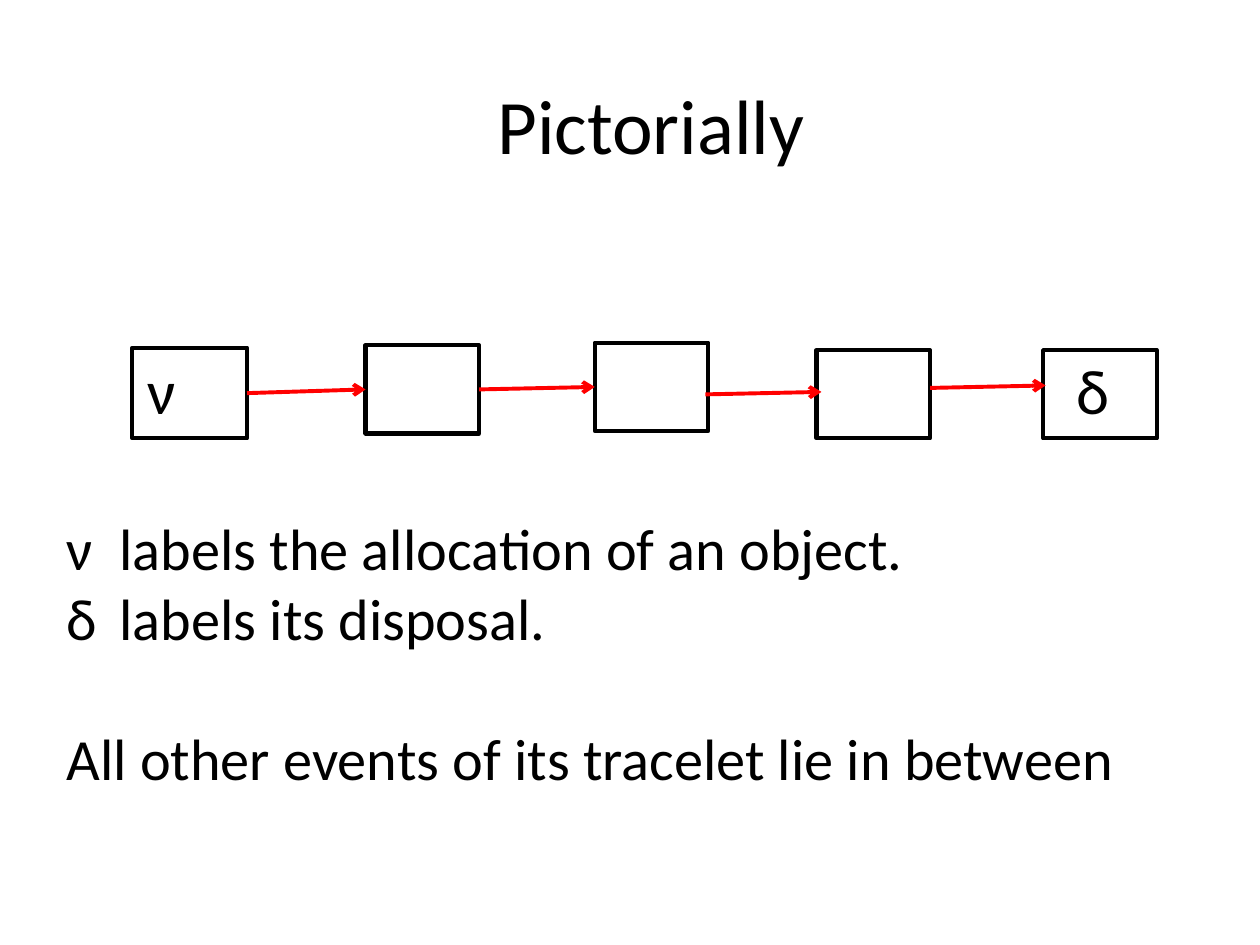
from pptx import Presentation
from pptx.dml.color import RGBColor
from pptx.enum.shapes import MSO_CONNECTOR, MSO_SHAPE
from pptx.enum.text import MSO_ANCHOR, PP_ALIGN
from pptx.oxml.ns import qn
from pptx.util import Cm, Pt
from lxml import etree

BLACK = RGBColor(0, 0, 0)
RED = RGBColor(255, 0, 0)
RECTANGLE = MSO_SHAPE.RECTANGLE
STRAIGHT = MSO_CONNECTOR.STRAIGHT
LEFT = PP_ALIGN.LEFT
CENTER = PP_ALIGN.CENTER
TOP = MSO_ANCHOR.TOP
MIDDLE = MSO_ANCHOR.MIDDLE
LEFT_SIDE, RIGHT_SIDE = 1, 3


class SlideBuilder:
    font = "Calibri"
    box_line = Pt(2.36)
    arrow_line = Pt(2.25)

    def __init__(self, slide):
        self.slide = slide

    def text_box(self, left, top, width, height, anchor=TOP, wrap=True):
        shape = self.slide.shapes.add_textbox(Cm(left), Cm(top), Cm(width), Cm(height))
        shape.text_frame.word_wrap = wrap
        shape.text_frame.vertical_anchor = anchor
        return shape.text_frame

    def add_text(self, paragraph, text, size, alignment=LEFT):
        paragraph.alignment = alignment
        run = paragraph.add_run()
        run.text = text
        run.font.name = self.font
        run.font.size = Pt(size)
        run.font.color.rgb = BLACK

    def label(self, text, size, bounds, alignment=LEFT, anchor=TOP, wrap=True):
        frame = self.text_box(*bounds, anchor, wrap)
        self.add_text(frame.paragraphs[0], text, size, alignment)

    def definitions(self, entries, conclusion, size, bounds, indent, gap):
        frame = self.text_box(*bounds, MIDDLE)
        paragraph = frame.paragraphs[0]
        for symbol, meaning in entries:
            properties = paragraph._p.get_or_add_pPr()
            properties.set("marL", str(Cm(indent)))
            properties.set("indent", str(-Cm(indent)))
            self.add_text(paragraph, f"{symbol}\t{meaning}", size)
            paragraph = frame.add_paragraph()
        paragraph.space_before = Pt(gap)
        self.add_text(paragraph, conclusion, size)

    def event_box(self, left, top, width, height):
        shape = self.slide.shapes.add_shape(
            RECTANGLE, Cm(left), Cm(top), Cm(width), Cm(height))
        shape.shadow.inherit = False
        shape.fill.background()
        shape.line.color.rgb = BLACK
        shape.line.width = self.box_line
        return shape

    def arrow(self, start_x, start_y, end_x, end_y):
        connector = self.slide.shapes.add_connector(
            STRAIGHT, Cm(start_x), Cm(start_y), Cm(end_x), Cm(end_y))
        connector.line.color.rgb = RED
        connector.line.width = self.arrow_line
        line = connector.line._get_or_add_ln()
        etree.SubElement(line, qn("a:tailEnd"), type="arrow")
        etree.SubElement(connector._element.spPr, qn("a:effectLst"))
        return connector

    def joined_arrow(self, source, target):
        connector = self.arrow(0, 0, 1, 1)
        connector.begin_connect(source, RIGHT_SIDE)
        connector.end_connect(target, LEFT_SIDE)


def main():
    presentation = Presentation()
    presentation.slide_width = Cm(25.4)
    presentation.slide_height = Cm(19.05)
    builder = SlideBuilder(presentation.slides.add_slide(presentation.slide_layouts[6]))

    builder.label("Pictorially", 44, (1.7, 0.91, 22.86, 3.18), CENTER, MIDDLE)

    allocation = builder.event_box(2.67, 7.01, 2.31, 1.83)
    second, third, fourth, disposal = [
        builder.event_box(left, top, 2.29, 1.78)
        for left, top in ((7.37, 6.96), (11.99, 6.91), (16.46, 7.06), (21.03, 7.06))
    ]
    builder.label("ν", 36, (2.72, 6.96, 2.31, 1.8))
    builder.label("δ", 36, (21.46, 6.96, 1.19, 1.8), wrap=False)

    builder.joined_arrow(allocation, second)
    builder.joined_arrow(second, third)
    builder.arrow(14.22, 7.95, 16.56, 7.9)
    builder.arrow(18.75, 7.82, 21.08, 7.77)

    builder.definitions(
        (("ν", "labels the allocation of an object."), ("δ", "labels its disposal.")),
        "All other events of its tracelet lie in between",
        33.3, (1.09, 10.57, 22.86, 5.16), indent=1.07, gap=40)

    presentation.save("out.pptx")


if __name__ == "__main__":
    main()
